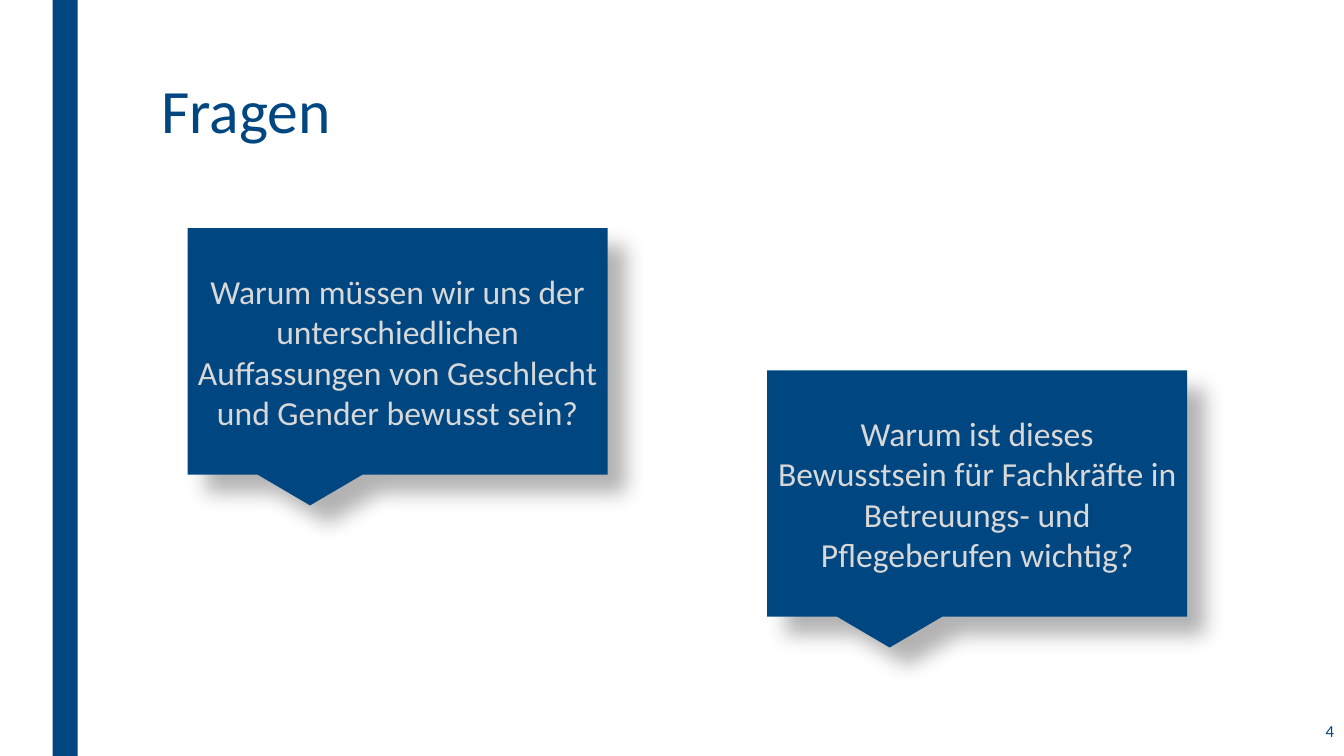
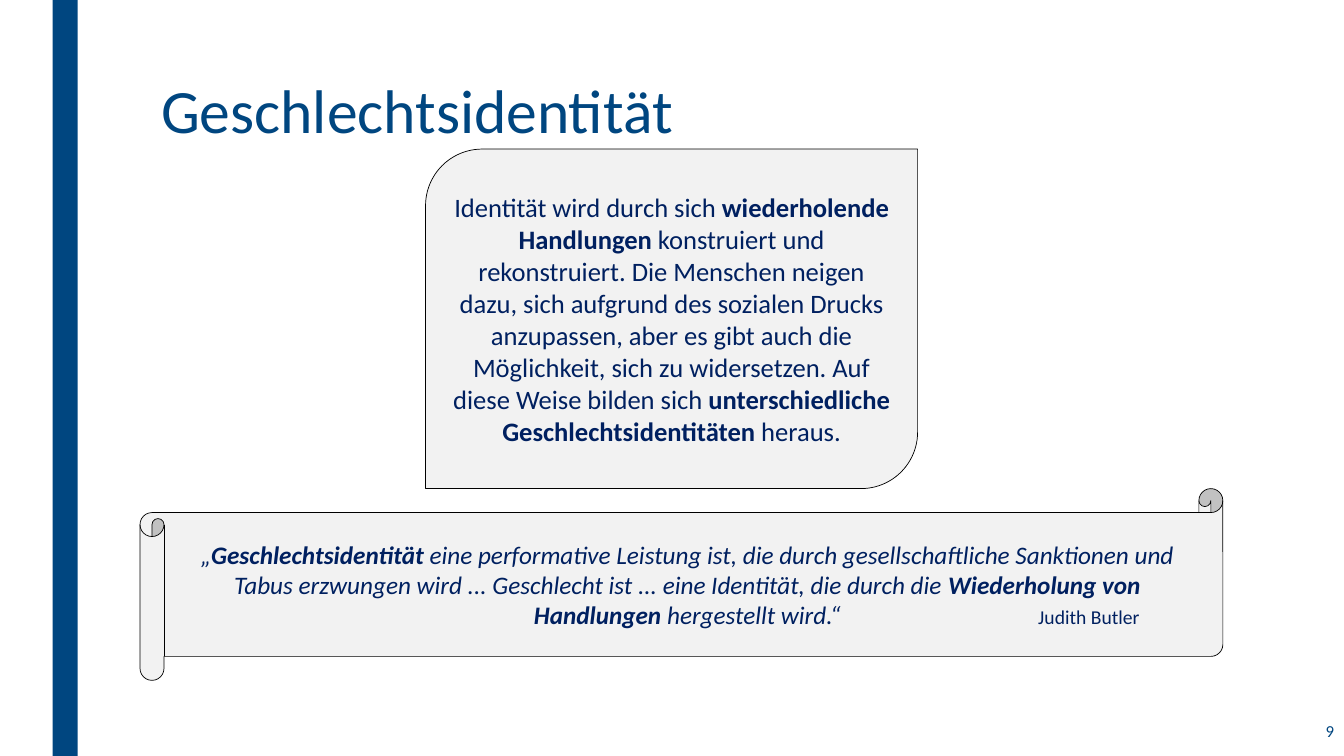
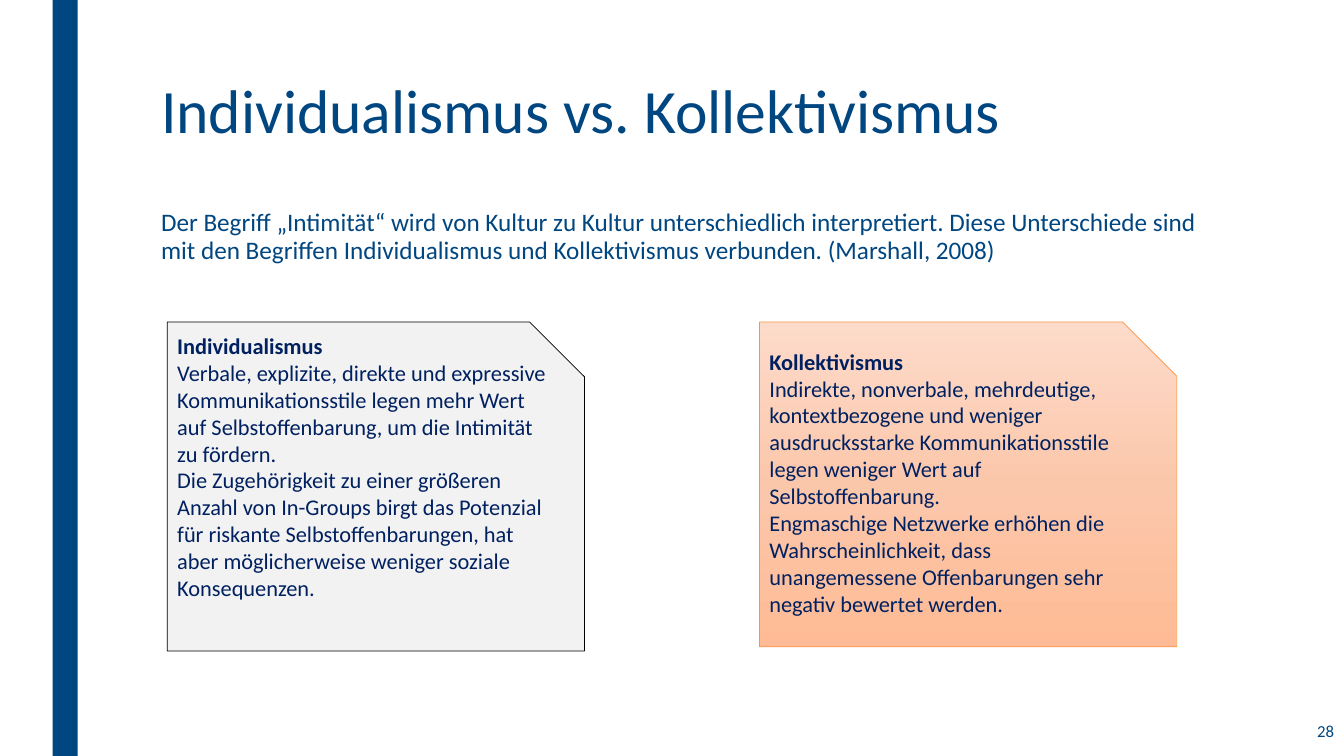
import copy

import lxml.etree
import pptx
import pptx.dml.color
import pptx.enum.shapes
import pptx.enum.text
import pptx.oxml.ns
import pptx.util

Pt = pptx.util.Pt
RGB = pptx.dml.color.RGBColor
SHAPE = pptx.enum.shapes.MSO_SHAPE
ALIGN = pptx.enum.text.PP_ALIGN
ANCHOR = pptx.enum.text.MSO_ANCHOR
qn = pptx.oxml.ns.qn

# Shared style
FONT = "Calibri"
BLUE = RGB(0x00, 0x46, 0x80)
NAVY = RGB(0x00, 0x20, 0x60)
SILVER = RGB(0xD8, 0xD8, 0xD8)
PALE = RGB(0xF2, 0xF2, 0xF2)
BLACK = RGB(0, 0, 0)
ORANGE = RGB(0xF7, 0x96, 0x46)
PEACH = [(0, RGB(0xFD, 0xDB, 0xCA)), (0.5, RGB(0xFB, 0xC7, 0xAB)),
         (1, RGB(0xFE, 0xBB, 0x95))]

# Content: ** switches bold on and off
ASKS = [
    ((134, 163), "Warum müssen wir uns der unterschiedlichen Auffassungen von "
                 "Geschlecht und Gender bewusst sein?"),
    ((548, 264.5), "Warum ist dieses Bewusstsein für Fachkräfte in Betreuungs- "
                   "und Pflegeberufen wichtig?"),
]
CLAIM = ("Identität wird durch sich **wiederholende Handlungen **konstruiert und "
         "rekonstruiert. Die Menschen neigen dazu, sich aufgrund des sozialen "
         "Drucks anzupassen, aber es gibt auch die Möglichkeit, sich zu "
         "widersetzen. Auf diese Weise bilden sich **unterschiedliche "
         "Geschlechtsidentitäten **heraus.")
QUOTE = ("„**Geschlechtsidentität **eine performative Leistung ist, die durch "
         "gesellschaftliche Sanktionen und Tabus erzwungen wird ... Geschlecht "
         "ist ... eine Identität, die durch die **Wiederholung von Handlungen "
         "**hergestellt wird.“")
INTRO = ("Der Begriff „Intimität“ wird von Kultur zu Kultur unterschiedlich "
         "interpretiert. Diese Unterschiede sind mit den Begriffen "
         "Individualismus und Kollektivismus verbunden. (Marshall, 2008)")
# Cards: left, height, bottom inset, fill, line, paragraphs
CARDS = [
    (119.5, 235, 51.6, PALE, BLACK, [
        "**Individualismus",
        "Verbale, explizite, direkte und expressive Kommunikationsstile legen "
        "mehr Wert auf Selbstoffenbarung, um die Intimität zu fördern.",
        "Die Zugehörigkeit zu einer größeren Anzahl von In-Groups birgt das "
        "Potenzial für riskante Selbstoffenbarungen, hat aber möglicherweise "
        "weniger soziale Konsequenzen."]),
    (542.5, 232, 26, PEACH, ORANGE, [
        "**Kollektivismus",
        "Indirekte, nonverbale, mehrdeutige, kontextbezogene und weniger "
        "ausdrucksstarke Kommunikationsstile legen weniger Wert auf "
        "Selbstoffenbarung.",
        "Engmaschige Netzwerke erhöhen die Wahrscheinlichkeit, dass "
        "unangemessene Offenbarungen sehr negativ bewertet werden."]),
]


def write(shape, paras, size, color, align=ALIGN.LEFT, anchor=ANCHOR.MIDDLE,
          italic=False, space=None):
    frame = shape.text_frame
    frame.word_wrap = True
    frame.vertical_anchor = anchor
    for i, text in enumerate(paras):
        para = frame.paragraphs[0] if i == 0 else frame.add_paragraph()
        para.alignment = align
        if space:
            para.line_spacing = space
        for j, part in enumerate(text.split("**")):
            if part:
                run = para.add_run()
                run.text = part
                font = run.font
                font.name, font.size = FONT, Pt(size)
                font.bold, font.italic = j % 2 == 1, italic
                font.color.rgb = color


def label(slide, box, text, size, color, **style):
    shape = slide.shapes.add_textbox(*map(Pt, box))
    write(shape, [text], size, color, **style)


def draw(slide, kind, box, fill, line=None):
    shape = slide.shapes.add_shape(kind, *map(Pt, box))
    shape.shadow.inherit = False
    if isinstance(fill, list):
        blend(shape, fill)
    else:
        shape.fill.solid()
        shape.fill.fore_color.rgb = fill
    if line is None:
        shape.line.fill.background()
    else:
        shape.line.color.rgb = line
        shape.line.width = Pt(0.5)
    return shape


def blend(shape, stops):
    """Fill from top to bottom with any number of colour stops."""
    shape.fill.gradient()
    shape.fill.gradient_angle = 270
    group = shape.element.spPr.find(".//" + qn("a:gsLst"))
    while len(group) < len(stops):
        group.append(copy.deepcopy(group[-1]))
    for stop, (place, color) in zip(shape.fill.gradient_stops, stops):
        stop.position = place
        stop.color.rgb = color


def shade(shape):
    """Add a soft shadow to the lower right."""
    effects = shape.element.spPr.find(qn("a:effectLst"))
    outer = lxml.etree.SubElement(
        effects, qn("a:outerShdw"), blurRad=str(Pt(15)), dist=str(Pt(18)),
        dir=str(45 * 60000), algn="tl", rotWithShape="0")
    tone = lxml.etree.SubElement(outer, qn("a:srgbClr"), val=str(BLACK))
    lxml.etree.SubElement(tone, qn("a:alpha"), val="30000")


def start(deck, title, number):
    """New slide with side band, title and page number."""
    slide = deck.slides.add_slide(deck.slide_layouts[6])
    draw(slide, SHAPE.RECTANGLE, (37.5, 0, 18, 540), BLUE)
    label(slide, (108, 54, 756, 117), title, 44, BLUE,
          anchor=ANCHOR.TOP, space=0.89)
    label(slide, (834, 506, 126, 32), str(number), 12, BLUE, align=ALIGN.RIGHT)
    return slide


def main():
    deck = pptx.Presentation()
    deck.slide_width, deck.slide_height = Pt(960), Pt(540)

    # Questions
    slide = start(deck, "Fragen", 4)
    for (left, top), text in ASKS:
        box = (left, top, 300, 176)
        shape = draw(slide, SHAPE.RECTANGULAR_CALLOUT, box, BLUE)
        shade(shape)
        write(shape, [text], 24, SILVER, ALIGN.CENTER)

    # Claim and quote
    slide = start(deck, "Geschlechtsidentität", 9)
    shape = draw(slide, SHAPE.ROUND_2_DIAG_RECTANGLE,
                 (304, 106.5, 351.5, 242.5), PALE, BLACK)
    write(shape, [CLAIM], 19, NAVY, ALIGN.CENTER)
    shape = draw(slide, SHAPE.HORIZONTAL_SCROLL, (100, 349, 773.5, 137),
                 PALE, BLACK)
    write(shape, [QUOTE], 18, NAVY, ALIGN.CENTER, italic=True)
    label(slide, (734.5, 428.5, 140, 24.5), "Judith Butler", 14, NAVY,
          anchor=ANCHOR.TOP)

    # Two cultures side by side
    slide = start(deck, "Individualismus vs. Kollektivismus", 28)
    label(slide, (108, 145.5, 756, 60), INTRO, 18, BLUE,
          anchor=ANCHOR.TOP, space=0.94)
    for left, height, inset, fill, line, paras in CARDS:
        shape = draw(slide, SHAPE.SNIP_1_RECTANGLE, (left, 230, 298, height),
                     fill, line)
        shape.text_frame.margin_bottom = Pt(inset)
        write(shape, paras, 16, NAVY)

    deck.save("out.pptx")


if __name__ == "__main__":
    main()
